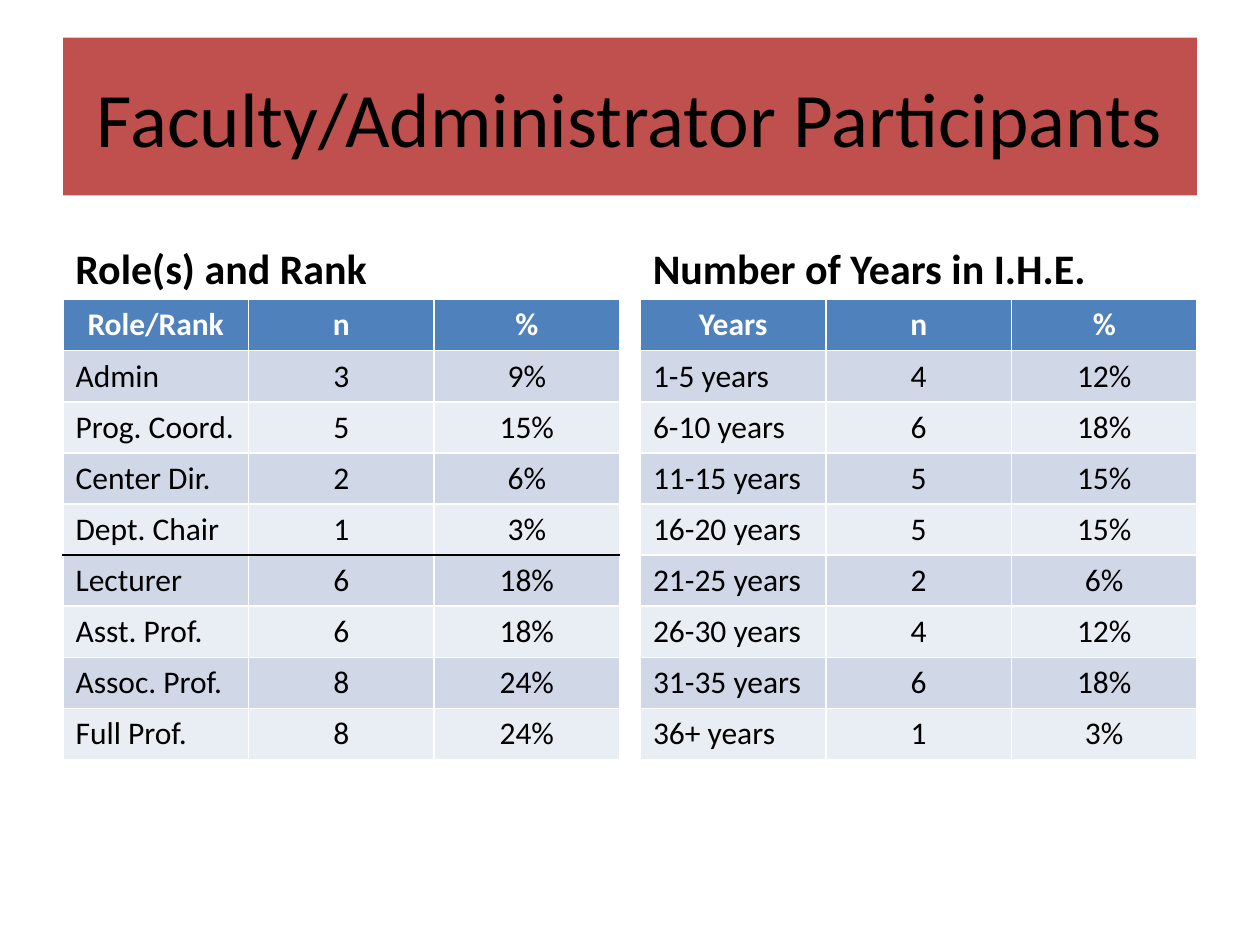
from dataclasses import dataclass

from lxml import etree
from pptx import Presentation
from pptx.dml.color import RGBColor
from pptx.enum.text import MSO_ANCHOR, PP_ALIGN
from pptx.oxml.ns import qn
from pptx.util import Cm, Pt

LEFT, CENTER = PP_ALIGN.LEFT, PP_ALIGN.CENTER
MIDDLE, BOTTOM = MSO_ANCHOR.MIDDLE, MSO_ANCHOR.BOTTOM

FONT = "Calibri"
BLACK = RGBColor(0x00, 0x00, 0x00)
WHITE = RGBColor(0xFF, 0xFF, 0xFF)
RED = RGBColor(0xC0, 0x50, 0x4D)
BLUE = RGBColor(0x4F, 0x81, 0xBD)
BANDS = (RGBColor(0xE9, 0xED, 0xF4), RGBColor(0xD0, 0xD8, 0xE8))

MARGIN = Cm(1.27)
PANEL_W = Cm(11.22)
HEADING_TOP, HEADING_H = Cm(4.26), Cm(1.78)
ROW_H = Cm(1.03)


@dataclass
class Panel:
    heading: str
    left: int
    rows: list[tuple[str, str, str]]
    divider_after: int | None = None  # row with a black line below it


PANELS = [
    Panel("Role(s) and Rank", MARGIN, [
        ("Role/Rank", "n", "%"),
        ("Admin", "3", "9%"),
        ("Prog. Coord.", "5", "15%"),
        ("Center Dir.", "2", "6%"),
        ("Dept. Chair", "1", "3%"),
        ("Lecturer", "6", "18%"),
        ("Asst. Prof.", "6", "18%"),
        ("Assoc. Prof.", "8", "24%"),
        ("Full Prof.", "8", "24%"),
    ], divider_after=4),
    Panel("Number of Years in I.H.E.", Cm(12.91), [
        ("Years", "n", "%"),
        ("1-5 years", "4", "12%"),
        ("6-10 years", "6", "18%"),
        ("11-15 years", "5", "15%"),
        ("16-20 years", "5", "15%"),
        ("21-25 years", "2", "6%"),
        ("26-30 years", "4", "12%"),
        ("31-35 years", "6", "18%"),
        ("36+ years", "1", "3%"),
    ]),
]


def write(tf, text: str, size: int, color: RGBColor = BLACK,
          bold: bool = False, align: PP_ALIGN = LEFT) -> None:
    tf.text = text
    p = tf.paragraphs[0]
    p.alignment = align
    font = p.runs[0].font
    font.name, font.size, font.bold = FONT, Pt(size), bold
    font.color.rgb = color


def add_border(cell, side: str, color: RGBColor) -> None:
    """Draw one cell edge; border elements go ahead of the cell fill."""
    ln = etree.Element(qn(f"a:{side}"), w=str(Pt(1)))
    fill = etree.SubElement(ln, qn("a:solidFill"))
    etree.SubElement(fill, qn("a:srgbClr"), val=str(color))
    cell._tc.get_or_add_tcPr().insert(0, ln)


def add_heading(s, panel: Panel) -> None:
    sp = s.shapes.add_textbox(panel.left, HEADING_TOP, PANEL_W, HEADING_H)
    tf = sp.text_frame
    tf.word_wrap = True
    tf.vertical_anchor = BOTTOM
    write(tf, panel.heading, 24, bold=True)


def add_panel_table(s, panel: Panel) -> None:
    n_rows, n_cols = len(panel.rows), len(panel.rows[0])
    table = s.shapes.add_table(n_rows, n_cols, panel.left, HEADING_TOP + HEADING_H,
                               PANEL_W, ROW_H * n_rows).table
    for i, row in enumerate(panel.rows):
        table.rows[i].height = ROW_H
        header = i == 0
        for j, text in enumerate(row):
            cell = table.cell(i, j)
            cell.fill.solid()
            cell.fill.fore_color.rgb = BLUE if header else BANDS[i % 2]
            write(cell.text_frame, text, 18, WHITE if header else BLACK,
                  header, CENTER if header or j else LEFT)
    # Black divider, shared by the cells on both sides of it
    if panel.divider_after is not None:
        for j in range(n_cols):
            add_border(table.cell(panel.divider_after, j), "lnB", BLACK)
            add_border(table.cell(panel.divider_after + 1, j), "lnT", BLACK)


def main() -> None:
    prs = Presentation()
    prs.slide_width, prs.slide_height = Cm(25.4), Cm(19.05)
    s = prs.slides.add_slide(prs.slide_layouts[5])

    # Title banner
    title = s.shapes.title
    title.left, title.top, title.width, title.height = MARGIN, Cm(0.76), Cm(22.86), Cm(3.18)
    title.fill.solid()
    title.fill.fore_color.rgb = RED
    title.text_frame.vertical_anchor = MIDDLE
    write(title.text_frame, "Faculty/Administrator Participants", 44, align=CENTER)

    # Two headed tables
    for panel in PANELS:
        add_heading(s, panel)
        add_panel_table(s, panel)

    prs.save("out.pptx")


if __name__ == "__main__":
    main()
